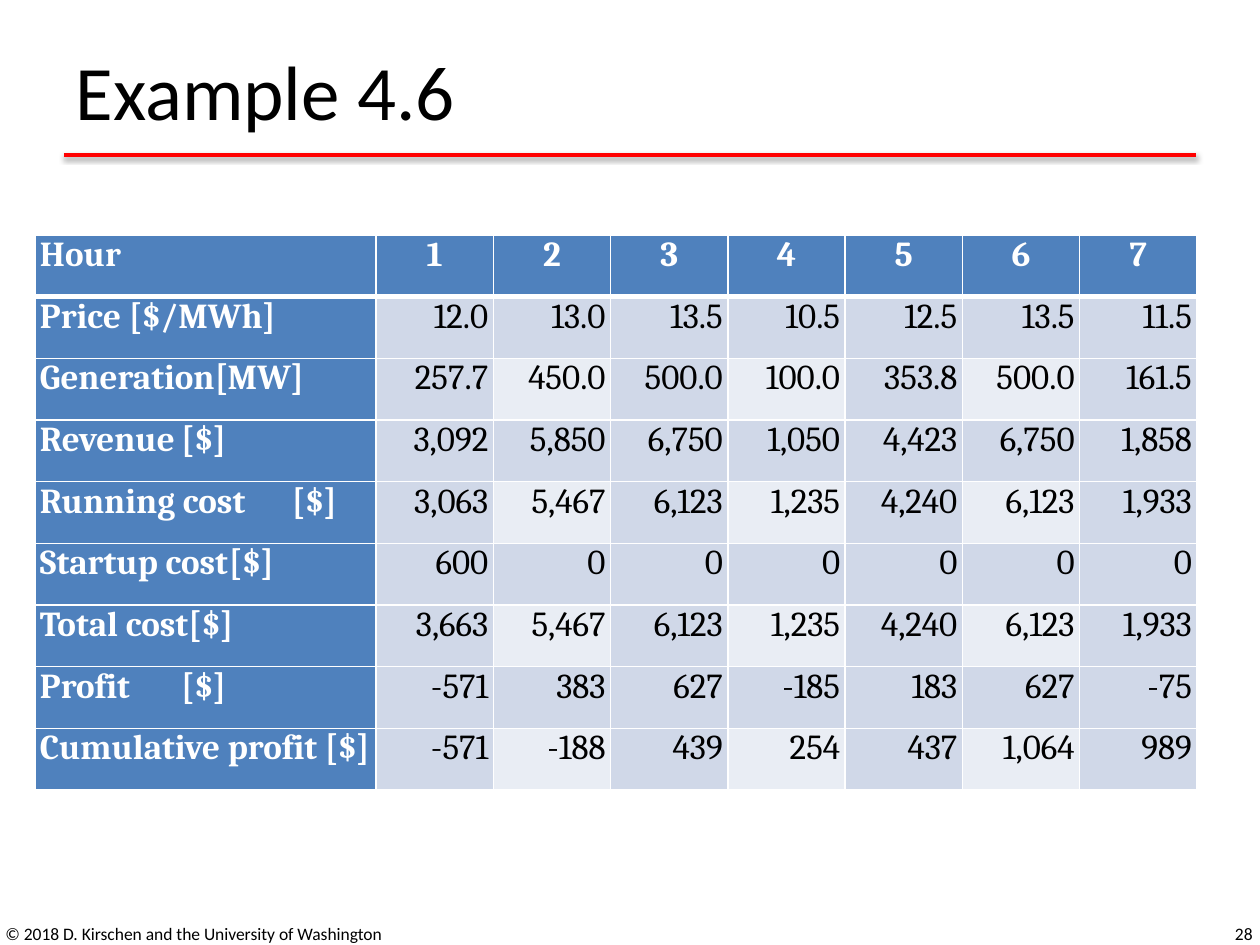
from lxml.etree import SubElement
from pptx import Presentation
from pptx.dml.color import RGBColor
from pptx.enum.shapes import MSO_CONNECTOR
from pptx.enum.text import MSO_ANCHOR, PP_ALIGN
from pptx.oxml.ns import qn
from pptx.util import Emu, Pt

COLORS = {
    "black": "000000",
    "white": "FFFFFF",
    "red": "FF0000",
    "head": "4F81BD",
    "band": "D0D8E8",
    "light": "E9EDF4",
}
SCALE = 914400 / 126

ROWS = [
    ("Hour", "1 2 3 4 5 6 7"),
    ("Price \t[$/MWh]", "12.0 13.0 13.5 10.5 12.5 13.5 11.5"),
    ("Generation\t[MW]", "257.7 450.0 500.0 100.0 353.8 500.0 161.5"),
    ("Revenue\t[$]", "3,092 5,850 6,750 1,050 4,423 6,750 1,858"),
    ("Running cost\t[$]", "3,063 5,467 6,123 1,235 4,240 6,123 1,933"),
    ("Startup cost\t[$]", "600 0 0 0 0 0 0"),
    ("Total cost\t[$]", "3,663 5,467 6,123 1,235 4,240 6,123 1,933"),
    ("Profit\t[$]", "-571 383 627 -185 183 627 -75"),
    ("Cumulative profit [$]", "-571 -188 439 254 437 1,064 989"),
]


def px(count):
    return Emu(round(count * SCALE))


def paint(name):
    return RGBColor.from_string(COLORS[name])


def node(parent, tag, **attrs):
    return SubElement(parent, qn(tag), {key: str(val) for key, val in attrs.items()})


class Deck:
    sans = "Calibri"
    serif = "Cambria"

    def __init__(self, width, height):
        self.show = Presentation()
        self.show.slide_width = px(width)
        self.show.slide_height = px(height)
        self.slide = self.show.slides.add_slide(self.show.slide_layouts[5])

    def style(self, frame, text, size, font, color="black", bold=False, align=PP_ALIGN.LEFT):
        frame.text = text
        line = frame.paragraphs[0]
        line.alignment = align
        for run in line.runs:
            run.font.size = Pt(size)
            run.font.name = font
            run.font.bold = bold
            run.font.color.rgb = paint(color)
        return line

    def title(self, text, left, top, width, height):
        shape = self.slide.shapes.title
        shape.left, shape.top = px(left), px(top)
        shape.width, shape.height = px(width), px(height)
        shape.text_frame.vertical_anchor = MSO_ANCHOR.MIDDLE
        self.style(shape.text_frame, text, 44, self.sans)

    def rule(self, left, right, top):
        line = self.slide.shapes.add_connector(
            MSO_CONNECTOR.STRAIGHT, px(left), px(top), px(right), px(top))
        line.line.color.rgb = paint("red")
        line.line.width = Pt(2)
        effect = node(line._element.spPr, "a:effectLst")
        shadow = node(effect, "a:outerShdw", blurRad=Pt(3.1), dist=Pt(1.6),
                      dir=90 * 60000, rotWithShape=0)
        tint = node(shadow, "a:srgbClr", val=COLORS["black"])
        node(tint, "a:alpha", val=38000)

    def label(self, text, left, top, width, height, align):
        box = self.slide.shapes.add_textbox(px(left), px(top), px(width), px(height))
        frame = box.text_frame
        frame.word_wrap = True
        frame.vertical_anchor = MSO_ANCHOR.MIDDLE
        self.style(frame, text, 10, self.sans, align=align)

    def edges(self, cell, row):
        wide = {"T": 3 if row == 1 else 1, "B": 3 if row == 0 else 1}
        for side in "LRTB":
            edge = node(cell._tc.get_or_add_tcPr(), f"a:ln{side}", w=Pt(wide.get(side, 1)))
            node(node(edge, "a:solidFill"), "a:srgbClr", val=COLORS["white"])

    def cell(self, cell, text, row, col):
        head = row == 0 or col == 0
        light = row % 2 == 0 and col % 2 == 0
        if col == 0:
            align = PP_ALIGN.LEFT
        else:
            align = PP_ALIGN.CENTER if row == 0 else PP_ALIGN.RIGHT
        cell.margin_left = cell.margin_right = px(5)
        cell.margin_top = cell.margin_bottom = 0
        self.edges(cell, row)
        cell.fill.solid()
        cell.fill.fore_color.rgb = paint("head" if head else "light" if light else "band")
        line = self.style(cell.text_frame, text, 20, self.serif,
                          "white" if head else "black", head, align)
        line.space_after = Pt(6)
        if "\t" in text:
            tabs = node(line._p.get_or_add_pPr(), "a:tabLst")
            node(tabs, "a:tab", pos=px(186), algn="r")

    def table(self, rows, left, top, width, height, first):
        count = len(rows[0][1].split())
        grid = self.slide.shapes.add_table(
            len(rows), count + 1, px(left), px(top), px(width), px(height)).table
        grid.first_row = grid.horz_banding = False
        for col, part in enumerate(grid.columns):
            part.width = px((width - first) / count if col else first)
        for row, (name, data) in enumerate(rows):
            for col, text in enumerate([name, *data.split()]):
                self.cell(grid.cell(row, col), text, row, col)

    def save(self):
        self.show.save("out.pptx")


def main():
    deck = Deck(1260, 945)
    deck.rule(64, 1196, 155)
    deck.title("Example 4.6", 63, 16, 1134, 148)
    deck.label("© 2018 D. Kirschen and the University of Washington",
               -7, 909, 489, 50, PP_ALIGN.LEFT)
    deck.label("28", 971, 909, 294, 50, PP_ALIGN.RIGHT)
    deck.table(ROWS, 35, 235, 1162, 555, 341)
    deck.save()


if __name__ == "__main__":
    main()
